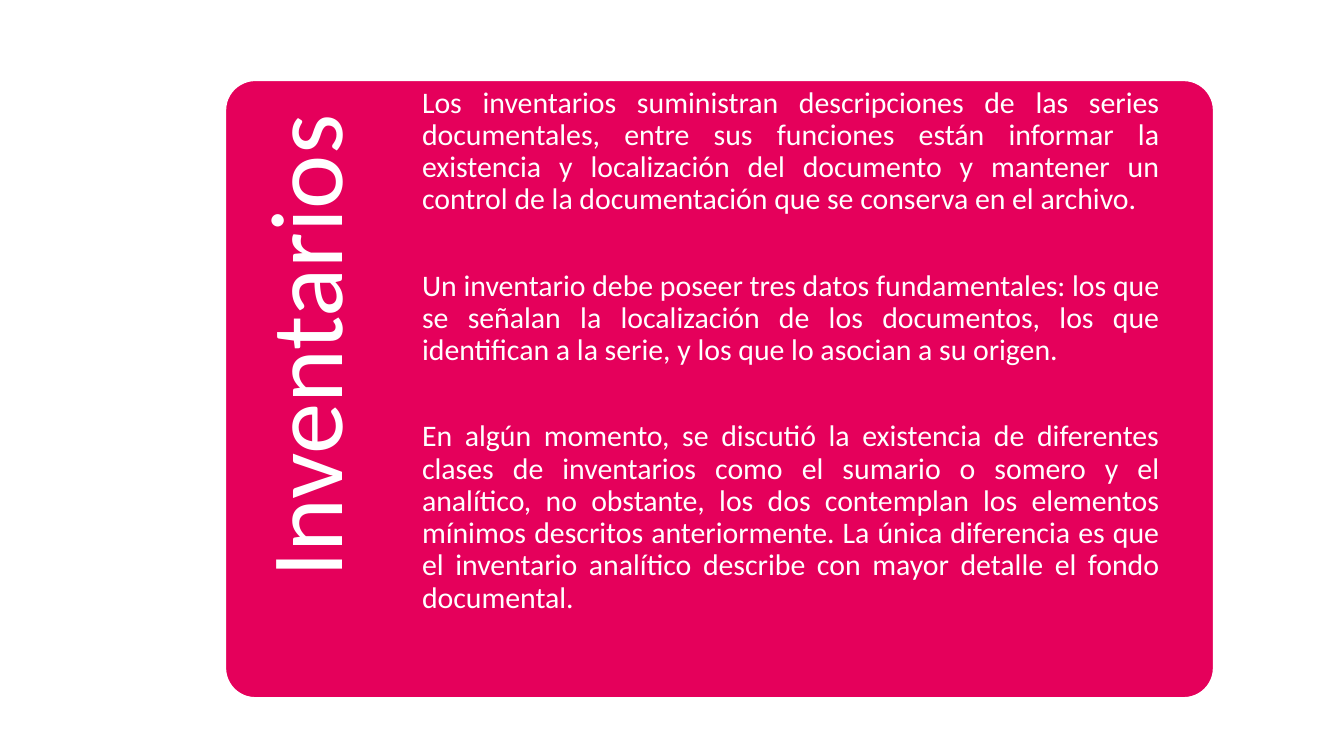
from pptx import Presentation
from pptx.dml.color import RGBColor
from pptx.enum.shapes import MSO_SHAPE
from pptx.enum.text import MSO_ANCHOR, PP_ALIGN
from pptx.util import Pt


def color(code):
    return RGBColor.from_string(code)


def write(box, lines, size, align, gap, frame):
    text = box.text_frame
    for key, value in frame.items():
        setattr(text, key, value)
    text.text = "\n".join(lines)
    form = {"alignment": align, "line_spacing": 0.9, "space_after": Pt(gap)}
    for para in text.paragraphs:
        for key, value in form.items():
            setattr(para, key, value)
        for run in para.runs:
            for key, value in {"name": "Calibri", "size": Pt(size)}.items():
                setattr(run.font, key, value)
            run.font.color.rgb = color("FFFFFF")


deck = Presentation()
deck.slide_width = Pt(720)
deck.slide_height = Pt(405)
slide = deck.slides.add_slide(deck.slide_layouts[6])
shapes = slide.shapes

top, height = Pt(42.5), Pt(332)

card = shapes.add_shape(MSO_SHAPE.ROUNDED_RECTANGLE, Pt(120.2), top, Pt(530.6), height)
card.adjustments[0] = 0.05
card.shadow.inherit = False
card.fill.solid()
card.fill.fore_color.rgb = color("E5005B")
card.line.color.rgb = color("FFFFFF")
card.line.width = Pt(2)

base = {
    "word_wrap": True,
    "vertical_anchor": MSO_ANCHOR.TOP,
    "margin_left": 0,
    "margin_right": 0,
    "margin_bottom": 0,
}

title = shapes.add_textbox(Pt(37.4), Pt(125.3), Pt(272.2), Pt(105.8))
title.rotation = 270
frame = base | {"margin_top": Pt(15.1), "margin_right": Pt(19.4)}
write(title, ["Inventarios"], 55, PP_ALIGN.RIGHT, 0, frame)

lines = [
    "Los inventarios suministran descripciones de las series documentales, "
    "entre sus funciones están informar la existencia y localización del "
    "documento y mantener un control de la documentación que se conserva "
    "en el archivo.",
    "Un inventario debe poseer tres datos fundamentales: los que se señalan "
    "la localización de los documentos, los que identifican a la serie, y "
    "los que lo asocian a su origen.",
    "En algún momento, se discutió la existencia de diferentes clases de "
    "inventarios como el sumario o somero y el analítico, no obstante, los "
    "dos contemplan los elementos mínimos descritos anteriormente. La única "
    "diferencia es que el inventario analítico describe con mayor detalle "
    "el fondo documental.",
]
body = shapes.add_textbox(Pt(226.1), top, Pt(395.3), height)
write(body, lines, 16, PP_ALIGN.JUSTIFY, 29, base | {"margin_top": Pt(4.3)})

deck.save("out.pptx")
